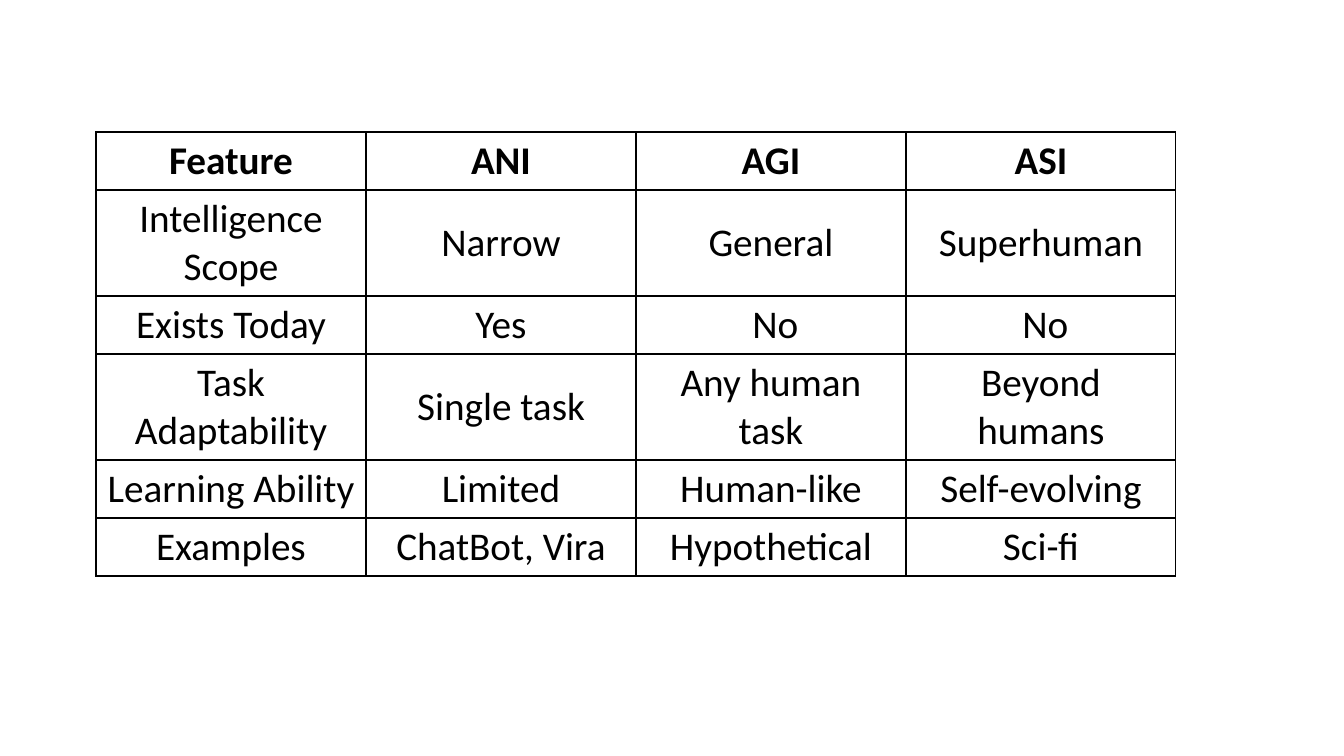
from lxml.etree import SubElement
from pptx import Presentation
from pptx.dml.color import RGBColor
from pptx.enum.text import MSO_ANCHOR, PP_ALIGN
from pptx.oxml.ns import qn
from pptx.util import Emu, Pt

# Content
ROWS = [
    ("Feature", "ANI", "AGI", "ASI"),
    ("Intelligence Scope", "Narrow", "General", "Superhuman"),
    ("Exists Today", "Yes", " No", " No"),
    ("Task Adaptability", "Single task", "Any human task", "Beyond humans"),
    ("Learning Ability", "Limited", "Human-like", "Self-evolving"),
    ("Examples", "ChatBot, Vira", "Hypothetical", "Sci-fi"),
]
TWO_LINE_ROWS = {1, 3}

# Style and layout, lengths in px
BLACK = RGBColor(0, 0, 0)
FONT = "Calibri"
TEXT_SIZE = Pt(28)
BORDER_WIDTH = Pt(1)
SLIDE_WIDTH, SLIDE_HEIGHT = 1344, 756
TABLE_LEFT, TABLE_TOP = 96, 132
COLUMN_WIDTH = 270
ONE_LINE_HEIGHT, TWO_LINE_HEIGHT = 58, 106


def px(length):
    return Emu(round(length * 914400 / 100.8))


def add_borders(cell):
    properties = cell._tc.get_or_add_tcPr()
    for position, side in enumerate(("a:lnL", "a:lnR", "a:lnT", "a:lnB")):
        line = SubElement(properties, qn(side), w=str(BORDER_WIDTH))
        properties.insert(position, line)
        fill = SubElement(line, qn("a:solidFill"))
        SubElement(fill, qn("a:srgbClr"), val=str(BLACK))


def fill_cell(cell, text, bold):
    cell.fill.background()
    cell.vertical_anchor = MSO_ANCHOR.MIDDLE
    add_borders(cell)
    paragraph = cell.text_frame.paragraphs[0]
    paragraph.alignment = PP_ALIGN.CENTER
    run = paragraph.add_run()
    run.text = text
    run.font.name = FONT
    run.font.size = TEXT_SIZE
    run.font.bold = bold
    run.font.color.rgb = BLACK


def main():
    presentation = Presentation()
    presentation.slide_width = px(SLIDE_WIDTH)
    presentation.slide_height = px(SLIDE_HEIGHT)
    slide = presentation.slides.add_slide(presentation.slide_layouts[6])

    # Comparison table
    heights = [TWO_LINE_HEIGHT if index in TWO_LINE_ROWS else ONE_LINE_HEIGHT
               for index in range(len(ROWS))]
    column_count = len(ROWS[0])
    table = slide.shapes.add_table(
        len(ROWS), column_count, px(TABLE_LEFT), px(TABLE_TOP),
        px(column_count * COLUMN_WIDTH), px(sum(heights))).table
    table.horz_banding = False
    for column in table.columns:
        column.width = px(COLUMN_WIDTH)
    for row_index, texts in enumerate(ROWS):
        table.rows[row_index].height = px(heights[row_index])
        for column_index, text in enumerate(texts):
            fill_cell(table.cell(row_index, column_index), text, bold=row_index == 0)

    presentation.save("out.pptx")


if __name__ == "__main__":
    main()
